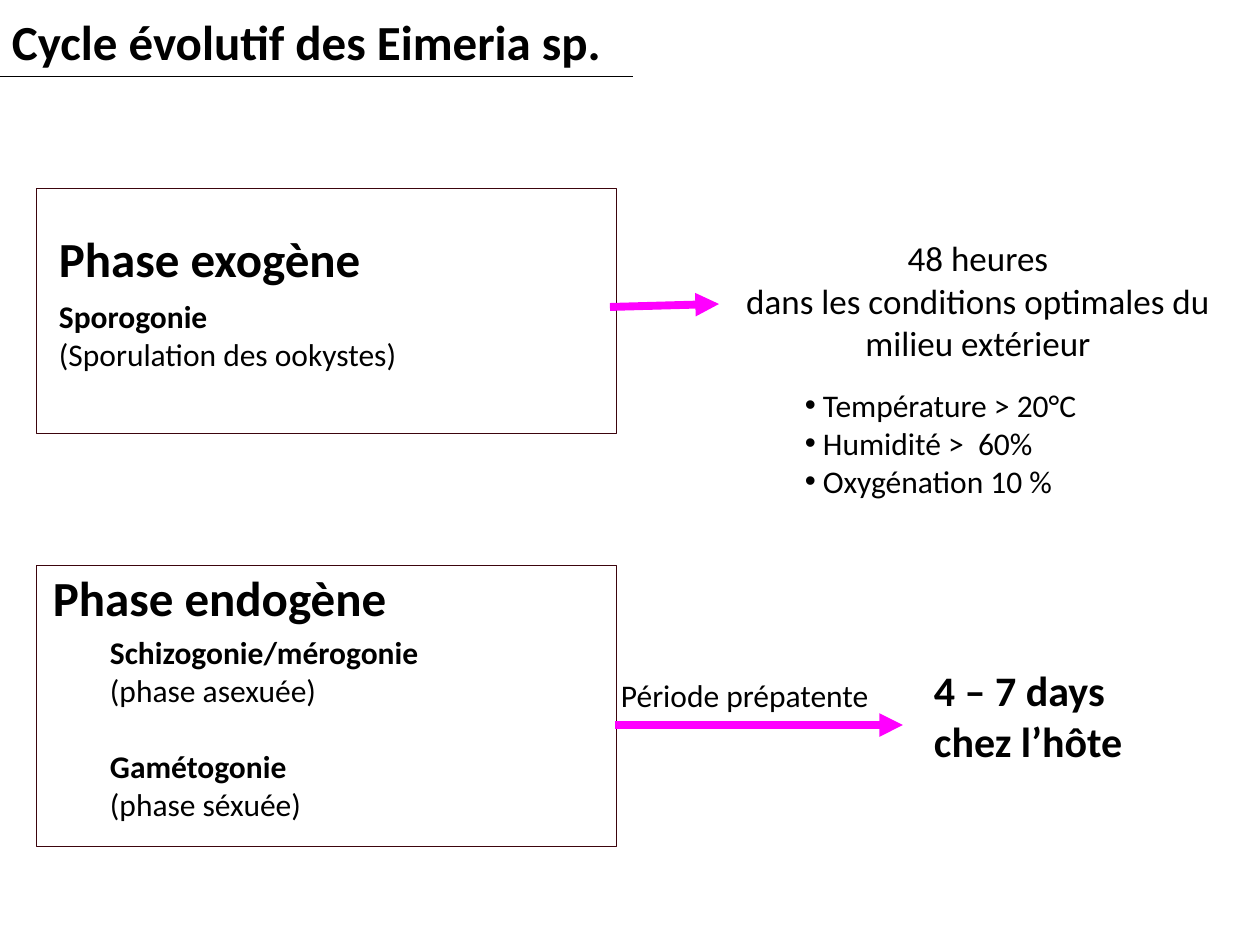
import pptx
import pptx.util
import pptx.dml.color
import pptx.enum.shapes
import pptx.enum.text
import pptx.oxml.ns
import lxml.etree

PX = 914400 / 126
BLACK = pptx.dml.color.RGBColor(0x00, 0x00, 0x00)
WHITE = pptx.dml.color.RGBColor(0xFF, 0xFF, 0xFF)
MAROON = pptx.dml.color.RGBColor(0x3C, 0x04, 0x0D)
MAGENTA = pptx.dml.color.RGBColor(0xFF, 0x00, 0xFF)
LEFT = pptx.enum.text.PP_ALIGN.LEFT
CENTER = pptx.enum.text.PP_ALIGN.CENTER
qn = pptx.oxml.ns.qn


def emu(*px):
    return [pptx.util.Emu(round(v * PX)) for v in px]


def add_text(text, box, size=18, bold=(), align=LEFT, inset=(6, 3), bullet=None, gaps={}):
    tf = s.shapes.add_textbox(*emu(*box)).text_frame
    tf.word_wrap = True
    tf.margin_left, tf.margin_top, tf.margin_right, tf.margin_bottom = emu(*inset, *inset)
    for i, line in enumerate(text.split("\n")):
        p = tf.paragraphs[0] if i == 0 else tf.add_paragraph()
        p.alignment = align
        p.space_before = pptx.util.Pt(gaps.get(i, 0))
        r = p.add_run()
        r.text = line
        r.font.name = "Calibri"
        r.font.size = pptx.util.Pt(size)
        r.font.bold = i in bold
        r.font.color.rgb = BLACK
        if bullet:
            pPr = p._p.get_or_add_pPr()
            indent = emu(18)[0]
            pPr.set("marL", str(indent))
            pPr.set("indent", str(-indent))
            lxml.etree.SubElement(pPr, qn("a:buFont"), typeface="Arial")
            lxml.etree.SubElement(pPr, qn("a:buChar"), char=bullet)


prs = pptx.Presentation()
prs.slide_width, prs.slide_height = emu(1260, 945)
s = prs.slides.add_slide(prs.slide_layouts[6])

for top, height in [(188, 245), (565, 281)]:
    sp = s.shapes.add_shape(pptx.enum.shapes.MSO_SHAPE.RECTANGLE, *emu(36, top, 580, height))
    sp.shadow.inherit = False
    sp.fill.solid()
    sp.fill.fore_color.rgb = WHITE
    sp.line.color.rgb = MAROON
    sp.line.width = pptx.util.Pt(0.25)

for ends, color, width, arrow in [
    ((0, 76, 633, 76), BLACK, 0.25, False),
    ((610, 307, 719, 304), MAGENTA, 4.5, True),
    ((615, 725, 903, 725), MAGENTA, 4.5, True),
]:
    c = s.shapes.add_connector(pptx.enum.shapes.MSO_CONNECTOR.STRAIGHT, *emu(*ends))
    c.line.color.rgb = color
    c.line.width = pptx.util.Pt(width)
    if arrow:
        lxml.etree.SubElement(c.line._get_or_add_ln(), qn("a:tailEnd"), type="triangle")
    lxml.etree.SubElement(c._element.spPr, qn("a:effectLst"))

add_text("Cycle évolutif des Eimeria sp.", (0, 5, 731, 72), size=28, bold=[0], inset=(12, 6))

add_text("Phase exogène", (53, 226, 369, 66), size=28, bold=[0])
add_text("Sporogonie\n(Sporulation des ookystes)", (53, 294, 401, 82), bold=[0])
add_text("48 heures\ndans les conditions optimales du milieu extérieur",
         (730, 234, 496, 132), size=20, align=CENTER)
add_text("Température > 20°C\nHumidité >  60%\nOxygénation 10 %", (799, 383, 440, 120), bullet="•")

add_text("Phase endogène", (47, 565, 405, 66), size=28, bold=[0])
add_text("Schizogonie/mérogonie\n(phase asexuée)\nGamétogonie\n(phase séxuée)",
         (104, 630, 401, 195), bold=[0, 2], gaps={2: 22})
add_text("Période prépatente", (615, 673, 280, 44))
add_text("4 – 7 days\nchez l’hôte", (928, 662, 229, 107), size=24, bold=[0, 1])

prs.save("out.pptx")
